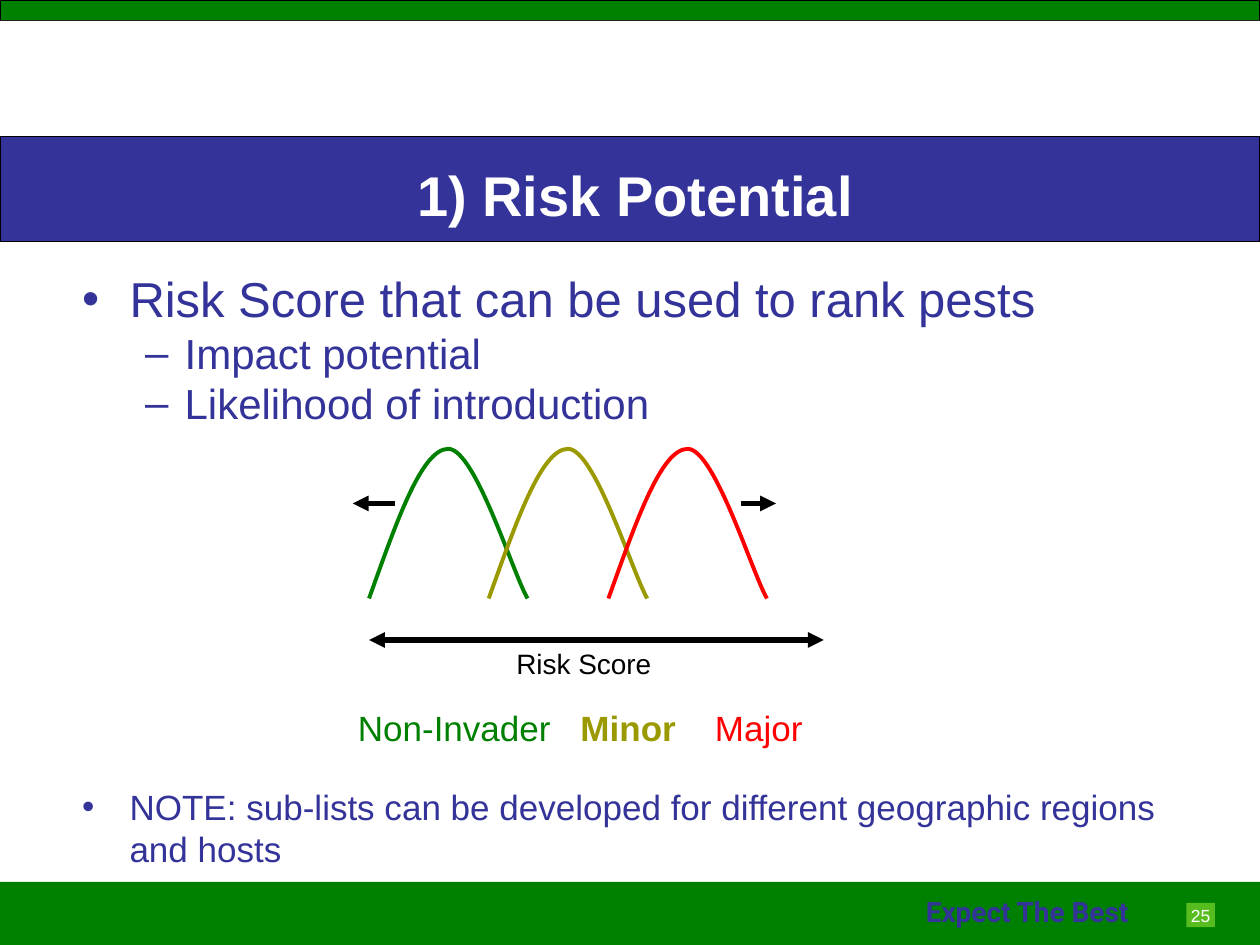
from pptx import Presentation
from pptx.dml.color import RGBColor
from pptx.enum.shapes import MSO_CONNECTOR, MSO_SHAPE
from pptx.enum.text import MSO_ANCHOR, PP_ALIGN
from pptx.oxml.ns import qn
from pptx.util import Inches, Pt
from lxml.etree import SubElement

THEME = {
    "font": "Arial", "slogan font": "Roboto",
    "white": "FFFFFF", "black": "000000", "band": "008000", "indigo": "333399",
    "badge": "57BD1F", "green": "008000", "olive": "9A9A00", "red": "FF0000",
    "title": 32, "point": 28, "subpoint": 24, "label": 20, "small": 16, "number": 10,
    "curve": 2.25, "arrow": 3, "hairline": 0, "border": 0.75,
}

deck = Presentation()
deck.slide_width, deck.slide_height = Inches(10), Inches(7.5)
page = deck.slides.add_slide(deck.slide_layouts[6])
shapes = page.shapes
column = deck.slide_width / 120
row = deck.slide_height / 90


def color(name):
    return RGBColor.from_string(THEME[name])


def write(text, area, size, ink, bold=False, font="font", align=PP_ALIGN.LEFT,
          anchor=MSO_ANCHOR.TOP, wrap=True, bullet=None, level=0, margin=0, hang=0,
          before=0, tabs=(), box=None):
    if box is None:
        left, top, width, height = area
        box = shapes.add_textbox(int(left * column), int(top * row),
                                 int(width * column), int(height * row))
    frame = box.text_frame
    frame.word_wrap, frame.vertical_anchor = wrap, anchor
    para = frame.add_paragraph() if frame.text else frame.paragraphs[0]
    para.alignment, para.level = align, level
    if before:
        para.space_before = Pt(before)
    properties = para._p.get_or_add_pPr()
    if bullet:
        properties.set("marL", str(int(margin * column)))
        properties.set("indent", str(int(-hang * column)))
        SubElement(properties, qn("a:buFont"), typeface=THEME["font"])
        SubElement(properties, qn("a:buChar"), char=bullet)
    if tabs:
        stops = SubElement(properties, qn("a:tabLst"))
        for stop in tabs:
            SubElement(stops, qn("a:tab"), pos=str(int(stop * column)), algn="l")
    pieces = [(text, ink, bold)] if isinstance(text, str) else text
    for words, shade, heavy in pieces:
        span = para.add_run()
        span.text = words
        span.font.name, span.font.size = THEME[font], Pt(THEME[size])
        span.font.bold, span.font.color.rgb = heavy, color(shade)
    return box


for left, top, width, height, fill, border in [
    (0, 0, 120, 2, "band", "hairline"),
    (0, 2, 120, 10, "white", None),
    (0, 84, 120, 6, "band", None),
    (0, 13, 120, 10, "indigo", "border"),
    (113, 86, 2.7, 2.3, "badge", None),
]:
    panel = shapes.add_shape(MSO_SHAPE.RECTANGLE, int(left * column), int(top * row),
                             int(width * column), int(height * row))
    panel.shadow.inherit = False
    panel.fill.solid()
    panel.fill.fore_color.rgb = color(fill)
    if border:
        panel.line.color.rgb = color("black")
        panel.line.width = Pt(THEME[border])
    else:
        panel.line.fill.background()

write("25", None, "number", "white", align=PP_ALIGN.CENTER,
      anchor=MSO_ANCHOR.MIDDLE, wrap=False, box=panel)
write("Expect The Best", (87, 84.6, 25.2, 4.4), "small", "indigo", bold=True, font="slogan font")
write("1) Risk Potential", (4, 11, 113, 15), "title", "white", bold=True,
      align=PP_ALIGN.CENTER, anchor=MSO_ANCHOR.MIDDLE)

points = write("Risk Score that can be used to rank pests", (6.65, 25, 110, 62),
               "point", "indigo", bullet="•", margin=4.5, hang=4.5)
for text in ["Impact potential", "Likelihood of introduction"]:
    write(text, None, "subpoint", "indigo", bullet="–", level=1, margin=9.75, hang=3.75,
          box=points)
write("NOTE: sub-lists can be developed for different geographic regions and hosts",
      None, "label", "indigo", bullet="•", margin=4.5, hang=4.5, before=204, box=points)

curve_top, curve_height, curve_width = 42.75, 14.25, 15.1
halves = [
    [(0.17, 0.5), (0.33, 0), (0.5, 0)],
    [(0.67, 0), (0.91, 0.84), (1, 1)],
]
for index, ink in enumerate(["green", "olive", "red"]):
    start = 35.15 + 11.4 * index
    knots = [(int((start + share * curve_width) * column),
              int((curve_top + drop * curve_height) * row))
             for share, drop in [(0, 1), (0.5, 0), (1, 1)]]
    builder = shapes.build_freeform(*knots[0])
    builder.add_line_segments(knots[1:], close=False)
    curve = builder.convert_to_shape()
    for segment, half in zip(list(curve._element.iter(qn("a:lnTo"))), halves):
        bend = SubElement(segment.getparent(), qn("a:cubicBezTo"))
        for share, drop in half:
            SubElement(bend, qn("a:pt"), x=str(int(share * curve.width)),
                       y=str(int(drop * curve.height)))
        segment.getparent().remove(segment)
    curve.shadow.inherit = False
    curve.fill.background()
    curve.line.color.rgb = color(ink)
    curve.line.width = Pt(THEME["curve"])

for begin, end, level, ends in [
    (37.6, 33.6, 47.95, ["tailEnd"]),
    (70.6, 73.9, 47.95, ["tailEnd"]),
    (35.15, 78.45, 60.95, ["headEnd", "tailEnd"]),
]:
    arrow = shapes.add_connector(MSO_CONNECTOR.STRAIGHT, int(begin * column), int(level * row),
                                 int(end * column), int(level * row))
    arrow.line.color.rgb = color("black")
    arrow.line.width = Pt(THEME["arrow"])
    for name in ends:
        SubElement(arrow.line._get_or_add_ln(), qn("a:" + name), type="triangle")
    SubElement(arrow._element.spPr, qn("a:effectLst"))

write([("Non-Invader\t", "green", False), ("Minor\t", "olive", True), ("Major", "red", False)],
      (32.9, 66.7, 50, 5.3), "label", "green", tabs=(21.2, 34))
write("Risk Score", (48, 61, 24.7, 4.4), "small", "black")

deck.save("out.pptx")
